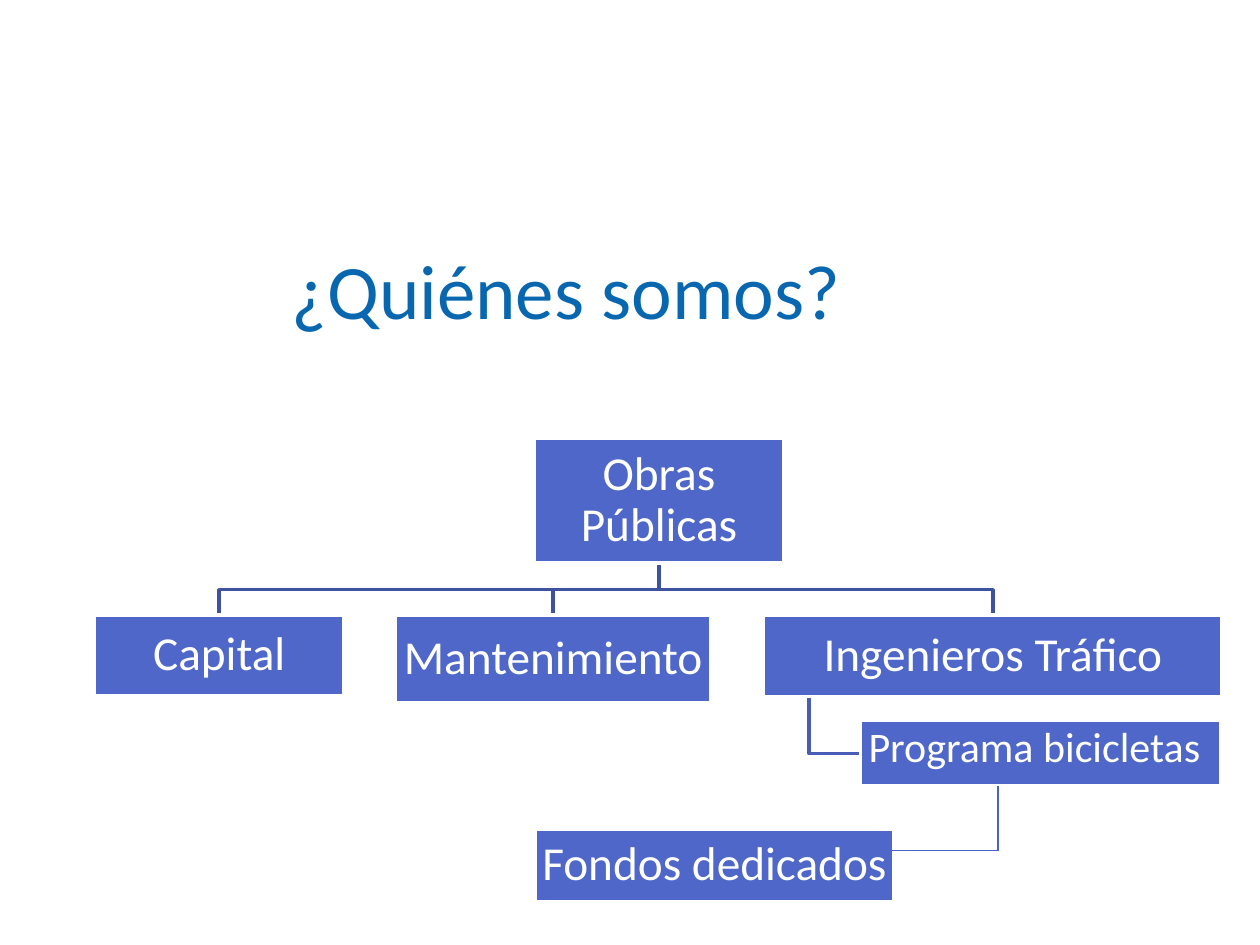
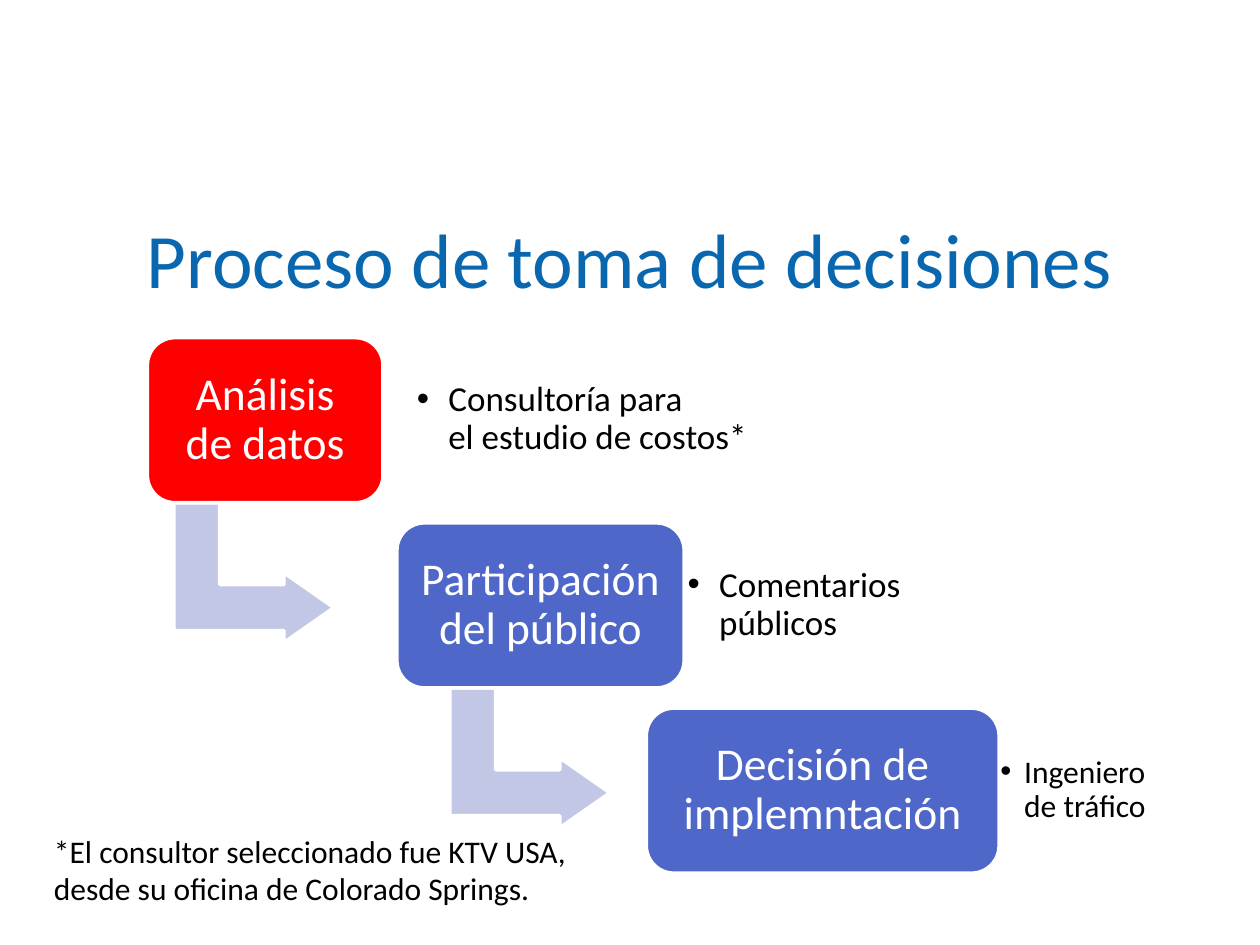
from lxml.etree import SubElement
from pptx import Presentation
from pptx.dml.color import RGBColor
from pptx.enum.shapes import MSO_CONNECTOR as Link, MSO_SHAPE as Preset
from pptx.enum.text import MSO_ANCHOR as Anchor, PP_ALIGN as Align
from pptx.oxml.ns import qn
from pptx.util import Inches, Pt

TITLE_BLUE = RGBColor(0x09, 0x67, 0xB0)
BOX_BLUE = RGBColor(0x4E, 0x67, 0xC8)
BRANCH_BLUE = RGBColor(0x3E, 0x52, 0xA0)
TWIG_BLUE = RGBColor(0x47, 0x5D, 0xB6)
THIN_BLUE = RGBColor(0x49, 0x63, 0xC7)
PALE_BLUE = RGBColor(0xC2, 0xC7, 0xE6)
RED = RGBColor(0xFF, 0x00, 0x00)
WHITE = RGBColor(0xFF, 0xFF, 0xFF)
BLACK = RGBColor(0x00, 0x00, 0x00)

FONT = "Calibri"
COLUMNS, ROWS = 100, 75


class Deck:
    def __init__(self):
        self.prs = Presentation()
        self.prs.slide_width, self.prs.slide_height = Inches(10), Inches(7.5)
        self.slide = None

    def new_slide(self, title, *place):
        self.slide = self.prs.slides.add_slide(self.prs.slide_layouts[6])
        self.text([title], place, 44, TITLE_BLUE, Align.CENTER, Anchor.MIDDLE)

    def grid(self, *lengths):
        units = self.prs.slide_width / COLUMNS, self.prs.slide_height / ROWS
        return [round(n * units[i % 2]) for i, n in enumerate(lengths)]

    def fill_text(self, frame, lines, size, color, align, anchor, inset=None, spacing=None, indent=None):
        frame.word_wrap = True
        frame.vertical_anchor = anchor
        if inset is not None:
            frame.margin_left = frame.margin_right = Inches(inset)
            frame.margin_top = frame.margin_bottom = Inches(inset)
        for index, line in enumerate(lines):
            paragraph = frame.add_paragraph() if index else frame.paragraphs[0]
            paragraph.alignment = align
            if spacing:
                paragraph.line_spacing = spacing
            if indent:
                props = paragraph._p.get_or_add_pPr()
                props.set("marL", str(Inches(indent)))
                props.set("indent", str(-Inches(indent)))
                SubElement(props, qn("a:buFont")).set("typeface", "Arial")
                SubElement(props, qn("a:buChar")).set("char", "•")
            for part, words in enumerate(line.split("\n")):
                if part:
                    paragraph.add_line_break()
                run = paragraph.add_run()
                run.text = words
                run.font.name, run.font.size = FONT, Pt(size)
                run.font.color.rgb = color

    def text(self, lines, place, size, color, align=Align.LEFT, anchor=Anchor.TOP, **layout):
        frame = self.slide.shapes.add_textbox(*self.grid(*place)).text_frame
        self.fill_text(frame, lines, size, color, align, anchor, **layout)

    def bullet(self, words, place, size, indent):
        self.text([words], place, size, BLACK, anchor=Anchor.MIDDLE, inset=0.1, spacing=0.9, indent=indent)

    def shape(self, preset, place, fill, adjustments=()):
        shape = self.slide.shapes.add_shape(preset, *self.grid(*place))
        shape.shadow.inherit = False
        shape.fill.solid()
        shape.fill.fore_color.rgb = fill
        shape.line.color.rgb = WHITE
        shape.line.width = Pt(2)
        for index, value in enumerate(adjustments):
            shape.adjustments[index] = value
        return shape

    def box(self, words, place, size, preset=Preset.RECTANGLE, fill=BOX_BLUE, inset=0.02, adjustments=()):
        shape = self.shape(preset, place, fill, adjustments)
        if words:
            self.fill_text(shape.text_frame, [words], size, WHITE, Align.CENTER, Anchor.MIDDLE, inset, 0.9)

    def turn_arrow(self, left, top):
        place = left, top, 11.1, 12.7
        self.shape(Preset.BENT_UP_ARROW, place, PALE_BLUE, (0.328, 0.25, 0.358)).rotation = 90

    def elbow(self, points, color):
        start, *rest = [self.grid(*point) for point in points]
        builder = self.slide.shapes.build_freeform(*start)
        builder.add_line_segments(rest, close=False)
        branch = builder.convert_to_shape()
        branch.shadow.inherit = False
        branch.fill.background()
        branch.line.color.rgb = color
        branch.line.width = Pt(2)

    def line(self, start, end, color, width):
        line = self.slide.shapes.add_connector(Link.STRAIGHT, *self.grid(*start, *end))
        line.line.color.rgb = color
        line.line.width = Pt(width)
        SubElement(line._element.spPr, qn("a:effectLst"))


def build_organization(deck):
    deck.new_slide("¿Quiénes somos?", 3.3, 18.3, 83.3, 9.2)
    root_x, root_bottom, bus, team_top = 52.3, 44.7, 46.8, 48.8
    teams = [
        ("Capital", 7.5, 19.8, 6.4),
        ("Mantenimiento", 31.4, 25, 7),
        ("Ingenieros Tráfico", 60.6, 36.4, 6.5),
    ]
    deck.elbow([(64.2, 55.3), (64.2, 59.8), (68.3, 59.8)], TWIG_BLUE)
    for _, left, width, _ in reversed(teams):
        team_x = left + width / 2
        deck.elbow([(root_x, root_bottom), (root_x, bus), (team_x, bus), (team_x, team_top)], BRANCH_BLUE)
    deck.box("Obras Públicas", (42.4, 34.8, 19.8, 9.9), 27)
    for name, left, width, height in teams:
        deck.box(name, (left, team_top, width, height), 27)
    deck.box("", (68.3, 57.2, 28.6, 5.2), 24)
    deck.box("Fondos dedicados", (42.5, 65.8, 28.4, 5.8), 27)
    deck.text(["Programa bicicletas"], (65, 56.7, 34.2, 5), 24, WHITE, Align.CENTER)
    corner = 79.2, 67.5
    deck.line((79.2, 62.4), corner, THIN_BLUE, 0.75)
    deck.line((70.8, 67.5), corner, THIN_BLUE, 0.75)


def build_process(deck):
    deck.new_slide("Proceso de toma de decisiones", 5, 14.2, 90, 12.5)
    first_top, step = 26.8, 14.7
    stages = [
        ("Análisis de datos", 11.7, 18.7, RED, "Consultoría para\nel estudio de costos*", 32.1, 31.5, 20, 0.25),
        ("Participación del público", 31.5, 22.8, BOX_BLUE, "Comentarios\npúblicos", 53.6, 24.3, 20, 0.25),
        ("Decisión de implemntación", 51.3, 28, BOX_BLUE, "Ingeniero\nde tráfico", 78.4, 14.5, 18, 0.19),
    ]
    for index, left in enumerate((14.6, 36.5)):
        deck.turn_arrow(left, first_top + 12.3 + index * step)
    for index, (stage, left, width, fill, detail, detail_left, detail_width, size, indent) in enumerate(stages):
        top = first_top + index * step
        deck.box(stage, (left, top, width, 13.1), 26, Preset.ROUNDED_RECTANGLE, fill, 0.11, (0.167,))
        deck.bullet(detail, (detail_left, top + 1.2, detail_width, 10.6), size, indent)
    deck.text(
        ["*El consultor seleccionado fue KTV USA,", "desde su oficina de Colorado Springs."],
        (3.3, 65.5, 46, 7.1), 18, BLACK,
    )


def main():
    deck = Deck()
    build_organization(deck)
    build_process(deck)
    deck.prs.save("out.pptx")


if __name__ == "__main__":
    main()
